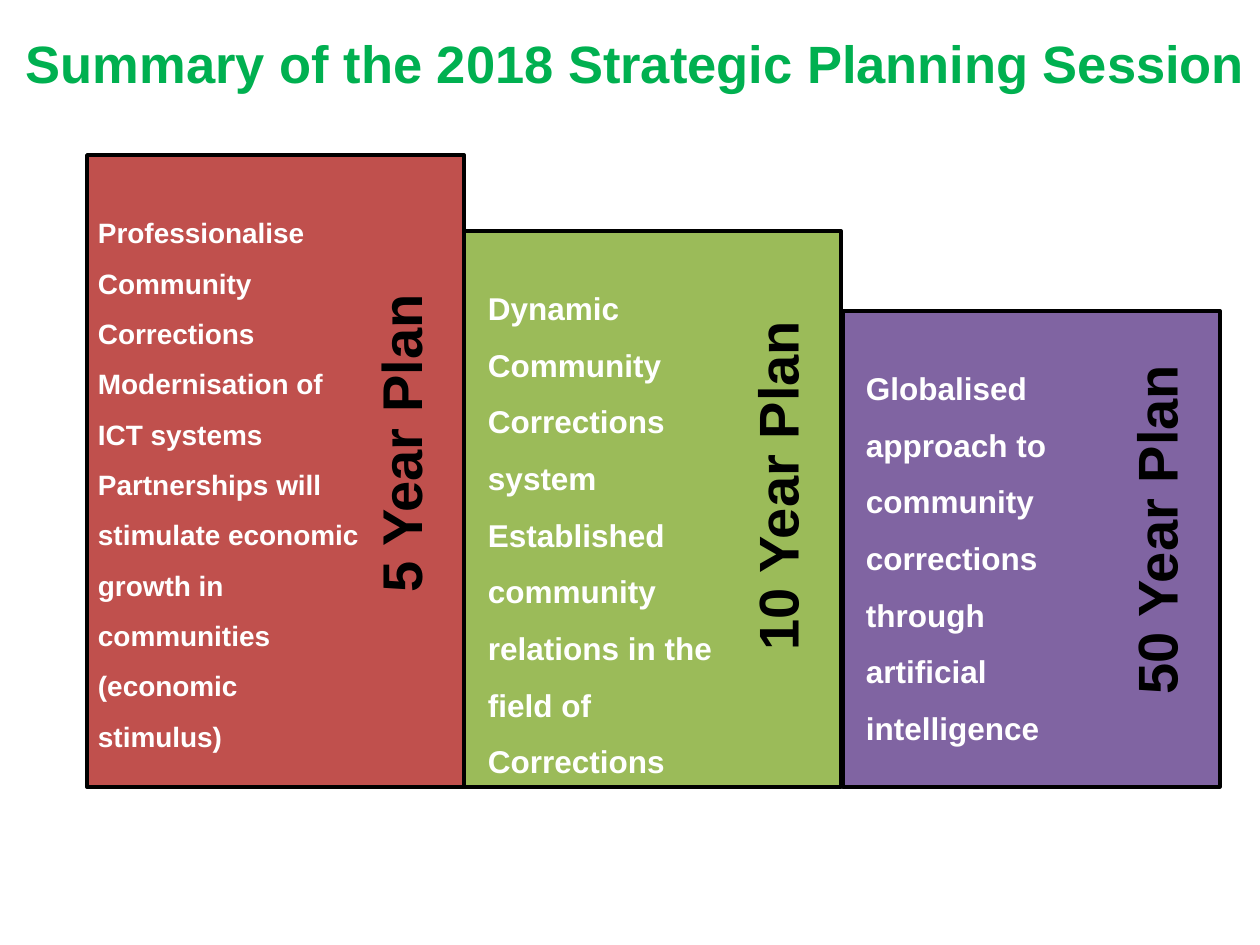
from collections import namedtuple

from pptx import Presentation
from pptx.dml.color import RGBColor
from pptx.enum.shapes import MSO_SHAPE as Shape
from pptx.enum.text import MSO_ANCHOR as Anchor, MSO_AUTO_SIZE as AutoSize, PP_ALIGN as Align
from pptx.util import Emu, Pt

EMU_PER_PX = 914400 / 126
FONT = "Arial"
BLACK, WHITE, GREEN = "000000", "FFFFFF", "00B050"
BAR_WIDTH, BAR_BOTTOM = 377, 787
LABEL_SHARE, LABEL_THICKNESS, LABEL_OFFSET = 0.9, 98, 319

Plan = namedtuple("Plan", "label left top fill goals goals_box inset size")

PLANS = [
    Plan("50 Year Plan", 843, 311, "8064A2",
         ["Globalised approach to community corrections through artificial intelligence"],
         (857, 341, 231, 207), 9, 18),
    Plan("10 Year Plan", 464, 231, "9BBB59",
         ["Dynamic Community Corrections system",
          "Established community relations in the field of Corrections"],
         (479, 261, 261, 446), 9, 18),
    Plan("5 Year Plan", 87, 155, "C0504D",
         ["Professionalise Community Corrections",
          "Modernisation of ICT systems",
          "Partnerships will stimulate economic growth in communities (economic stimulus)"],
         (92, 193, 276, 594), 6, 16),
]


def px(length):
    return Emu(round(length * EMU_PER_PX))


def color(value):
    return RGBColor.from_string(value)


def write(frame, paragraphs, size, ink, insets, align=Align.LEFT, anchor=Anchor.TOP, spacing=1.0):
    frame.word_wrap = True
    frame.auto_size = AutoSize.NONE
    frame.vertical_anchor = anchor
    (frame.margin_left, frame.margin_top,
     frame.margin_right, frame.margin_bottom) = map(px, insets)
    frame.text = "\n".join(paragraphs)
    for paragraph in frame.paragraphs:
        paragraph.alignment = align
        paragraph.line_spacing = spacing
        for run in paragraph.runs:
            run.font.name = FONT
            run.font.size = Pt(size)
            run.font.bold = True
            run.font.color.rgb = color(ink)


def add_title(slide, text):
    title = slide.shapes.title
    title.left, title.top, title.width, title.height = map(px, (14, 25, 1246, 77))
    write(title.text_frame, [text], 30, GREEN, (12, 6, 0, 6))


def add_bar(slide, plan):
    box = (plan.left, plan.top, BAR_WIDTH, BAR_BOTTOM - plan.top)
    bar = slide.shapes.add_shape(Shape.RECTANGLE, *map(px, box))
    bar.shadow.inherit = False
    bar.fill.solid()
    bar.fill.fore_color.rgb = color(plan.fill)
    bar.line.color.rgb = color(BLACK)
    bar.line.width = Pt(2)


def add_label(slide, plan):
    length = round((BAR_BOTTOM - plan.top) * LABEL_SHARE)
    left = plan.left + LABEL_OFFSET - length // 2
    top = plan.top + (length - LABEL_THICKNESS) // 2
    label = slide.shapes.add_textbox(*map(px, (left, top, length, LABEL_THICKNESS)))
    label.rotation = 270
    write(label.text_frame, [plan.label], 32, BLACK, (16, 0, 25, 5),
          Align.CENTER, Anchor.MIDDLE, 0.9)


def add_goals(slide, plan):
    goals = slide.shapes.add_textbox(*map(px, plan.goals_box))
    write(goals.text_frame, plan.goals, plan.size, WHITE, [plan.inset] * 4, spacing=1.5)


def main():
    deck = Presentation()
    deck.slide_width, deck.slide_height = px(1260), px(945)
    slide = deck.slides.add_slide(deck.slide_layouts[5])
    add_title(slide, "Summary of the 2018 Strategic Planning Session")
    for plan in PLANS:
        add_bar(slide, plan)
        add_label(slide, plan)
        add_goals(slide, plan)
    deck.save("out.pptx")


if __name__ == "__main__":
    main()
